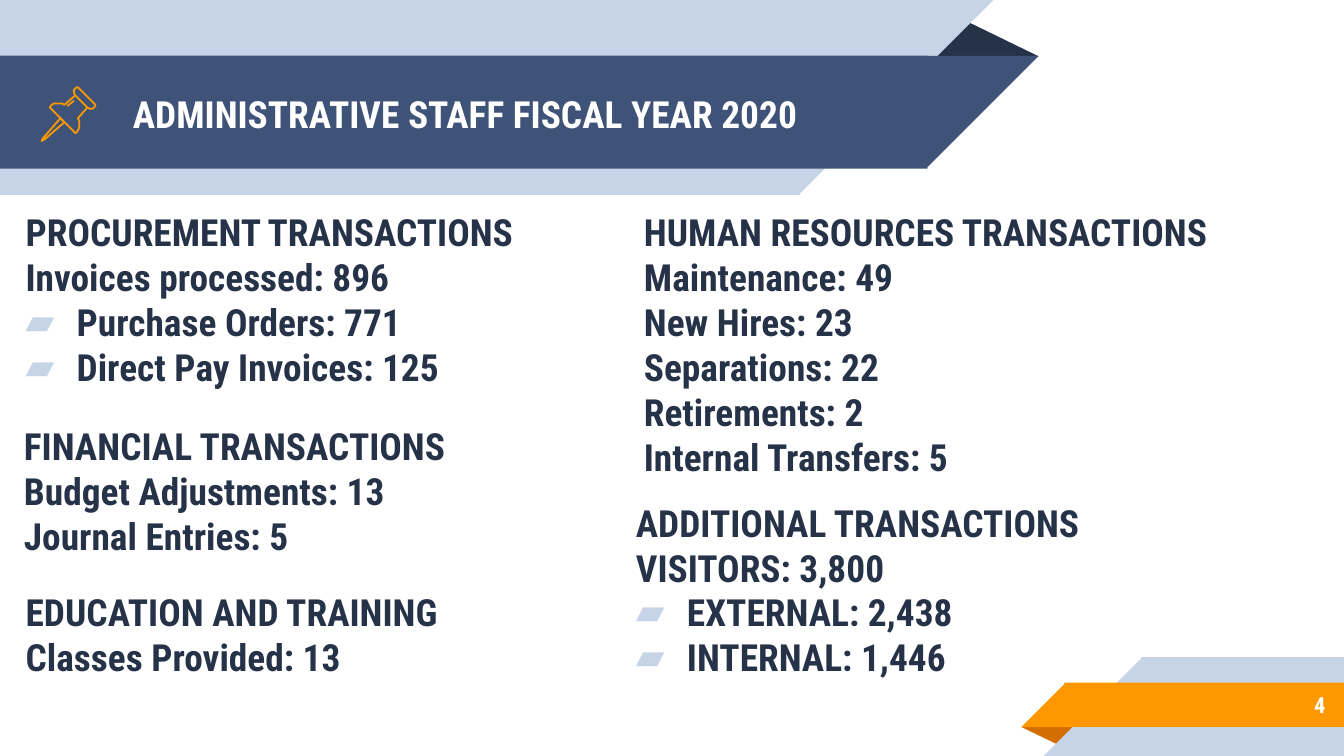
from pptx import Presentation
from pptx.dml.color import RGBColor
from pptx.enum.shapes import MSO_SHAPE
from pptx.enum.text import MSO_ANCHOR, PP_ALIGN
from pptx.oxml.ns import qn
from pptx.util import Inches, Pt
from lxml import etree

RECTANGLE = MSO_SHAPE.RECTANGLE
RIGHT_TRIANGLE = MSO_SHAPE.RIGHT_TRIANGLE
TRIANGLE = MSO_SHAPE.ISOSCELES_TRIANGLE
TOP, MIDDLE = MSO_ANCHOR.TOP, MSO_ANCHOR.MIDDLE
LEFT, RIGHT = PP_ALIGN.LEFT, PP_ALIGN.RIGHT

COLUMNS, ROWS = 100, 56.25
OVERLAP = 0.1
COLORS = {
    "navy": "263248",
    "blue": "3F5378",
    "pale": "C7D3E6",
    "orange": "FF9800",
    "rust": "D26F00",
    "white": "FFFFFF",
}
BULLET = "▰"

TEXT_BLOCKS = [
    (0.93, 14.6, 50.6, 11.2, [
        "PROCUREMENT TRANSACTIONS", "Invoices processed: 896",
        BULLET + "Purchase Orders: 771", BULLET + "Direct Pay Invoices: 125"]),
    (0.8, 30.5, 46.7, 9.5, [
        "FINANCIAL TRANSACTIONS", "Budget Adjustments: 13", "Journal Entries: 5"]),
    (46.93, 14.6, 50.6, 9.5, [
        "HUMAN RESOURCES TRANSACTIONS", "Maintenance: 49", "New Hires: 23",
        "Separations: 22", "Retirements: 2", "Internal Transfers: 5"]),
    (0.93, 42.85, 52.6, 6, ["EDUCATION AND TRAINING", "Classes Provided: 13"]),
    (46.33, 36.2, 49.8, 13.3, [
        "ADDITIONAL TRANSACTIONS", "VISITORS: 3,800",
        BULLET + "EXTERNAL: 2,438", BULLET + "INTERNAL: 1,446"]),
]

PIN_NEEDLE = [(4.5, 8.8), (3.2, 10.3), (3.1, 10.5), (3.3, 10.4), (4.8, 9.1)]
PIN_HEAD = [
    (5.6, 7.1), (6.5, 8), (6.7, 8.1), (6.9, 8.1), (7, 8), (7.1, 7.9),
    (7.1, 7.8), (5.8, 6.5), (5.7, 6.5), (5.6, 6.6), (5.5, 6.7), (5.5, 6.9)]
PIN_BODY = [
    (5.6, 7.1), (4.8, 7.8), (4.6, 7.7), (4.3, 7.7), (4, 7.7), (3.8, 7.85),
    (3.7, 8), (3.8, 8.1), (5.5, 9.8), (5.6, 9.9), (5.7, 9.85), (5.8, 9.7),
    (5.9, 9.5), (5.9, 9.2), (5.9, 9), (5.8, 8.8), (6.5, 8)]
PIN_GLINT = [(5, 7.9), (5.5, 7.5)]


class SlideBuilder:
    """Draws ribbons, outlines and text on one slide, measured in grid columns and rows."""

    font = "Roboto Condensed"

    def __init__(self, presentation):
        self.slide = presentation.slides.add_slide(presentation.slide_layouts[6])
        self.column = presentation.slide_width / COLUMNS
        self.row = presentation.slide_height / ROWS

    def box(self, left, top, width, height):
        return (round(left * self.column), round(top * self.row),
                round(width * self.column), round(height * self.row))

    def color(self, name):
        return RGBColor.from_string(COLORS[name])

    def preset(self, kind, box, color, rotation=0, flip=False):
        shape = self.slide.shapes.add_shape(kind, *self.box(*box))
        shape.shadow.inherit = False
        shape.fill.solid()
        shape.fill.fore_color.rgb = self.color(color)
        shape.line.fill.background()
        shape.rotation = rotation
        if flip:
            shape._element.spPr.find(qn("a:xfrm")).set("flipH", "1")
        return shape

    def fold(self, box, color, rotation=0):
        self.preset(TRIANGLE, box, color, rotation).adjustments[0] = 0.324

    def left_ribbon(self, top, width, height, color):
        self.preset(RECTANGLE, (0, top, width + OVERLAP, height), color)
        self.preset(RIGHT_TRIANGLE, (width, top, height, height), color, 180, True)

    def right_ribbon(self, left, top, height, color):
        start = left - OVERLAP
        self.preset(RECTANGLE, (start, top, COLUMNS - start, height), color)
        self.preset(RIGHT_TRIANGLE, (left - height, top, height, height), color, flip=True)

    def outline(self, points, closed=False):
        corners = [(x * self.column, y * self.row) for x, y in points]
        builder = self.slide.shapes.build_freeform(*corners[0])
        builder.add_line_segments(corners[1:], close=closed)
        shape = builder.convert_to_shape()
        shape.shadow.inherit = False
        shape.fill.background()
        shape.line.color.rgb = self.color("orange")
        shape.line.width = Pt(0.96)

    def bullet(self, paragraph):
        properties = paragraph._p.get_or_add_pPr()
        properties.set("marL", str(Inches(0.38)))
        properties.set("indent", str(-Inches(0.38)))
        bullet_color = etree.SubElement(properties, qn("a:buClr"))
        etree.SubElement(bullet_color, qn("a:srgbClr"), val=COLORS["pale"])
        etree.SubElement(properties, qn("a:buFont"), typeface=self.font)
        etree.SubElement(properties, qn("a:buChar"), char=BULLET)

    def text(self, box, lines, color="navy", size=20, anchor=TOP, align=LEFT):
        frame = self.slide.shapes.add_textbox(*self.box(*box)).text_frame
        frame.word_wrap = True
        frame.vertical_anchor = anchor
        frame.margin_left = frame.margin_right = Inches(0.1)
        frame.margin_top = frame.margin_bottom = Inches(0.1)
        for index, line in enumerate(lines):
            paragraph = frame.add_paragraph() if index else frame.paragraphs[0]
            paragraph.text = line.removeprefix(BULLET)
            paragraph.alignment = align
            if line.startswith(BULLET):
                self.bullet(paragraph)
            paragraph.font.name = self.font
            paragraph.font.size = Pt(size)
            paragraph.font.bold = True
            paragraph.font.color.rgb = self.color(color)


def main():
    presentation = Presentation()
    presentation.slide_width = Inches(10)
    presentation.slide_height = Inches(10) * 9 // 16
    builder = SlideBuilder(presentation)

    builder.fold((76, 54.1, 4.3, 1.4), "rust", 180)
    builder.right_ribbon(85, 48.9, 7.35, "pale")
    builder.right_ribbon(79.3, 50.8, 3.3, "orange")

    builder.fold((68.8, 1.4, 8.5, 2.8), "navy")
    builder.left_ribbon(0, 59.4, 14.5, "pale")
    builder.left_ribbon(4.15, 68.9, 8.4, "blue")

    builder.text((8.9, 4.25, 60.1, 8.4), ["ADMINISTRATIVE STAFF FISCAL YEAR 2020"],
                 "white", anchor=MIDDLE)
    builder.text((83.3, 50.7, 16.3, 3.5), ["4"], "white", 12, MIDDLE, RIGHT)

    builder.outline(PIN_NEEDLE, closed=True)
    builder.outline(PIN_HEAD, closed=True)
    builder.outline(PIN_BODY)
    builder.outline(PIN_GLINT)

    for *box, lines in TEXT_BLOCKS:
        builder.text(box, lines)

    presentation.save("out.pptx")


if __name__ == "__main__":
    main()
